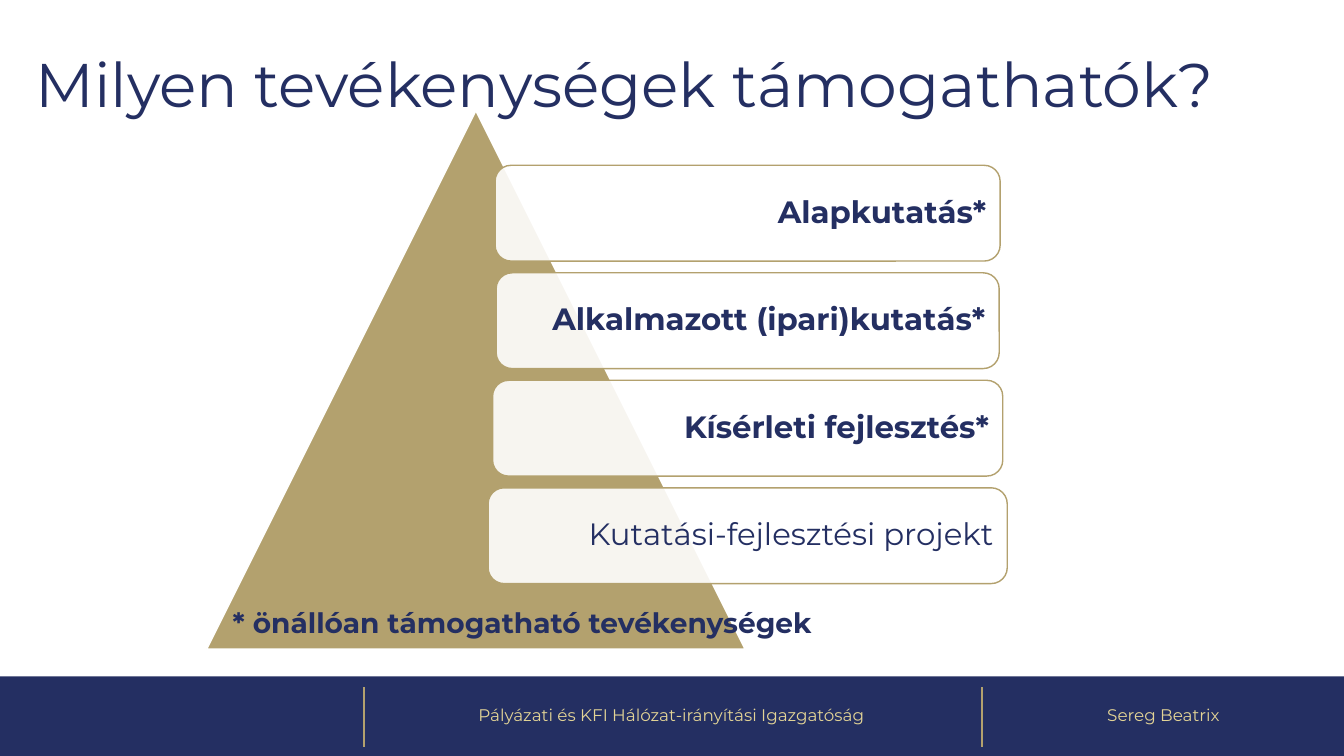
from pptx import Presentation
from pptx.dml.color import RGBColor
from pptx.enum.shapes import MSO_CONNECTOR as CONN, MSO_SHAPE as SHAPE
from pptx.enum.text import MSO_ANCHOR as ANCHOR, PP_ALIGN as ALIGN
from pptx.oxml.ns import qn
from pptx.util import Inches, Pt
from lxml.etree import SubElement

NAVY, GOLD, SAND, WHITE = "242F62", "B3A16E", "E3D496", "FFFFFF"
FONT = "Montserrat"


def rgb(value):
    return RGBColor.from_string(value)


def write(sp, text, size=22, color=NAVY, bold=False, align=ALIGN.LEFT,
          anchor=ANCHOR.MIDDLE, spacing=0.9, inset=None):
    """Put one formatted paragraph into a shape."""
    tf = sp.text_frame
    tf.word_wrap = True
    tf.vertical_anchor = anchor
    if inset is not None:
        tf.margin_left = tf.margin_right = Inches(inset)
        tf.margin_top = tf.margin_bottom = Inches(inset)
    p = tf.paragraphs[0]
    p.alignment = align
    p.line_spacing = spacing
    r = p.add_run()
    r.text = text
    r.font.name, r.font.size, r.font.bold = FONT, Pt(size), bold
    r.font.color.rgb = rgb(color)


class Deck:
    """Places elements on a grid of 100 columns by 100 rows."""

    def __init__(self):
        self.prs = Presentation()
        self.prs.slide_width, self.prs.slide_height = Inches(13.33), Inches(7.5)
        self.s = self.prs.slides.add_slide(self.prs.slide_layouts[6])

    def cells(self, x, y, w, h):
        col, row = self.prs.slide_width / 100, self.prs.slide_height / 100
        return int(x * col), int(y * row), int(w * col), int(h * row)

    def text(self, box, text, **fmt):
        write(self.s.shapes.add_textbox(*self.cells(*box)), text, **fmt)

    def shape(self, kind, box, fill, line=None, opacity=None):
        sp = self.s.shapes.add_shape(kind, *self.cells(*box))
        sp.shadow.inherit = False
        sp.fill.solid()
        sp.fill.fore_color.rgb = rgb(fill)
        if opacity is not None:
            clr = sp.fill._xPr.find(qn("a:solidFill"))[0]
            SubElement(clr, qn("a:alpha")).set("val", str(opacity * 1000))
        if line:
            sp.line.color.rgb = rgb(line)
            sp.line.width = Pt(1)
        else:
            sp.line.fill.background()
        return sp

    def divider(self, x, top, bottom):
        x1, y1, x2, y2 = self.cells(x, top, x, bottom)
        c = self.s.shapes.add_connector(CONN.STRAIGHT, x1, y1, x2, y2)
        c.line.color.rgb = rgb(GOLD)
        c.line.width = Pt(1.5)
        SubElement(c._element.spPr, qn("a:effectLst"))

    def card(self, center, y, w, h, text, bold):
        box = center - w / 2, y, w, h
        sp = self.shape(SHAPE.ROUNDED_RECTANGLE, box, WHITE, GOLD, opacity=90)
        write(sp, text, bold=bold, align=ALIGN.RIGHT, inset=0.09)


def main():
    deck = Deck()
    footer_top, footer_h = 89.47, 10.53
    deck.shape(SHAPE.RECTANGLE, (0, footer_top, 100, footer_h), NAVY)
    for x in (27.08, 73.07):
        deck.divider(x, 90.93, 98.8)
    deck.text((1.88, 1.87, 93.7, 19.33), "Milyen tevékenységek támogathatók?", size=44)
    for x, w, label in (
        (26.93, 46.06, "Pályázati és KFI Hálózat-irányítási Igazgatóság"),
        (73.07, 27, "Sereg Beatrix"),
    ):
        deck.text((x, footer_top, w, footer_h), label, size=12, color=SAND,
                  align=ALIGN.CENTER)

    deck.shape(SHAPE.ISOSCELES_TRIANGLE, (15.38, 14.67, 40.06, 71.2), GOLD, WHITE)
    activities = (
        ("Alapkutatás*", 37.58, True),
        ("Alkalmazott (ipari)kutatás*", 37.43, True),
        ("Kísérleti fejlesztés*", 37.96, True),
        ("Kutatási-fejlesztési projekt", 38.63, False),
    )
    for i, (label, w, bold) in enumerate(activities):
        deck.card(55.63, 21.87 + i * 14.22, w, 12.67, label, bold)
    deck.text((16.58, 79.47, 50.34, 5.87), "* önállóan támogatható tevékenységek",
              size=20, bold=True, anchor=ANCHOR.TOP, spacing=1.0)
    deck.prs.save("out.pptx")


if __name__ == "__main__":
    main()
